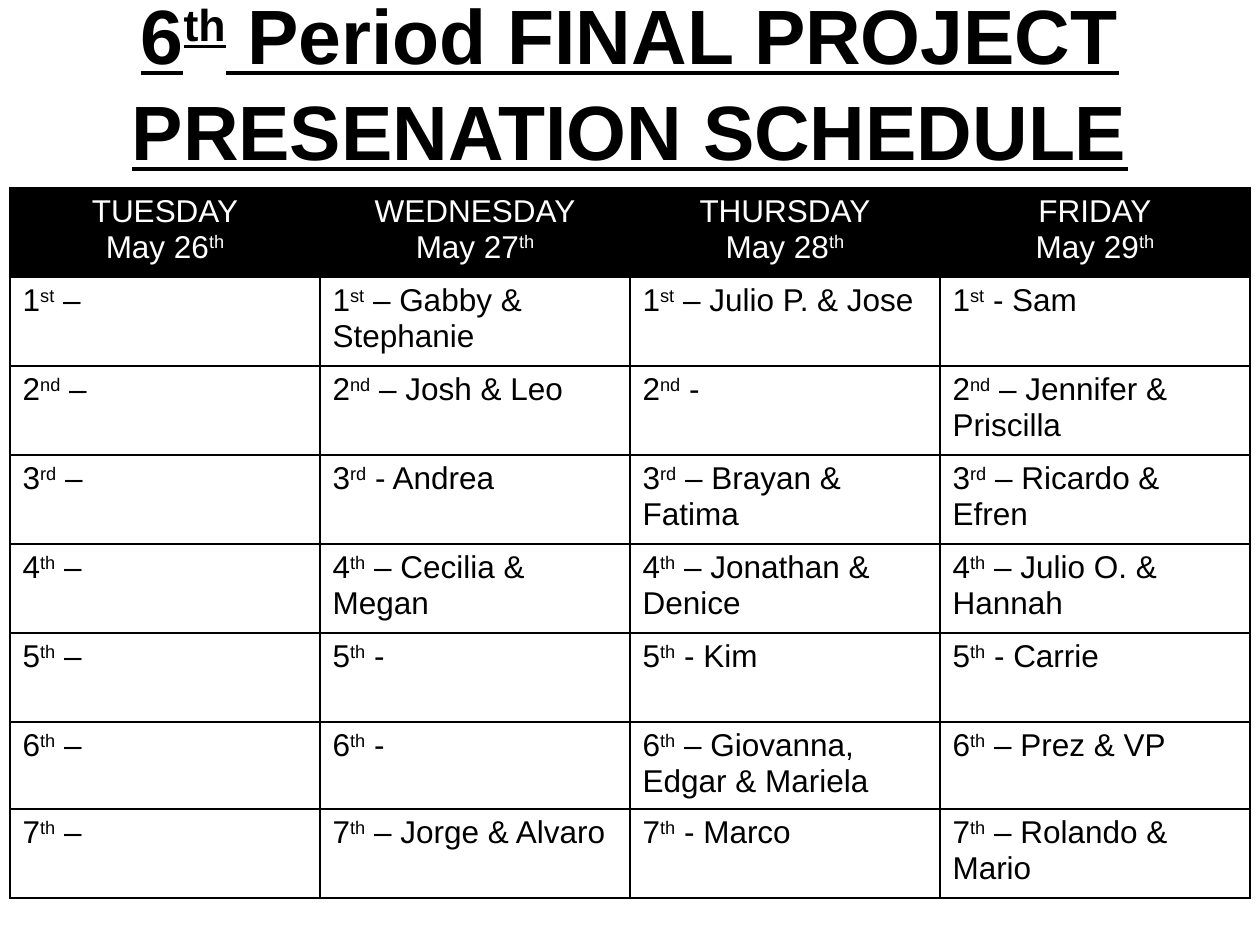
"""Build the 6th period final project presentation schedule slide."""
from lxml.etree import SubElement
from pptx import Presentation
from pptx.dml.color import RGBColor
from pptx.enum.text import MSO_ANCHOR, MSO_AUTO_SIZE, PP_ALIGN
from pptx.oxml.ns import qn
from pptx.util import Pt

SCALE = 914400 / 126
BLACK, WHITE = "000000", "FFFFFF"
DAYS = [("TUESDAY", "26"), ("WEDNESDAY", "27"), ("THURSDAY", "28"), ("FRIDAY", "29")]
SUFFIXES = ["st", "nd", "rd", "th", "th", "th", "th"]
PRESENTERS = [
    ["–", "– Gabby & Stephanie", "– Julio P. & Jose", "- Sam"],
    ["–", "– Josh & Leo", "-", "– Jennifer & Priscilla"],
    ["–", "- Andrea", "– Brayan & Fatima", "– Ricardo & Efren"],
    ["–", "– Cecilia & Megan", "– Jonathan & Denice", "– Julio O. & Hannah"],
    ["–", "-", "- Kim", "- Carrie"],
    ["–", "-", "– Giovanna, Edgar & Mariela", "– Prez & VP"],
    ["–", "– Jorge & Alvaro", "- Marco", "– Rolando & Mario"],
]


def px(length):
    return round(length * SCALE)


def write(paragraph, parts, size, color, align=PP_ALIGN.LEFT):
    """Fill a paragraph, raising every second part as a superscript."""
    paragraph.alignment = align
    paragraph.font.name = "Arial"
    paragraph.font.size = Pt(size)
    paragraph.font.color.rgb = RGBColor.from_string(color)
    for index, text in enumerate(parts):
        run = paragraph.add_run()
        run.text = text
        if index % 2:
            run._r.get_or_add_rPr().set("baseline", "30000")


presentation = Presentation()
presentation.slide_width, presentation.slide_height = px(1260), px(945)
slide = presentation.slides.add_slide(presentation.slide_layouts[5])

title = slide.shapes.title
title.left, title.top, title.width, title.height = px(0), px(38), px(1260), px(88)
frame = title.text_frame
frame.word_wrap = True
frame.auto_size = MSO_AUTO_SIZE.NONE
frame.vertical_anchor = MSO_ANCHOR.MIDDLE
title_lines = [["6", "th", " Period FINAL PROJECT"], ["PRESENATION SCHEDULE"]]
for paragraph, parts in zip([frame.paragraphs[0], frame.add_paragraph()], title_lines):
    write(paragraph, parts, 44, BLACK, PP_ALIGN.CENTER)
    paragraph.font.bold = True
    paragraph.font.underline = True
frame.paragraphs[1].space_before = Pt(2)

table = slide.shapes.add_table(8, 4, px(10), px(188), px(1240), px(710)).table
table.first_row = False
table.horz_banding = False
for column in table.columns:
    column.width = px(310)
for index, row in enumerate(table.rows):
    row.height = px(87 if index == 6 else 89)

for cell in table.iter_cells():
    properties = cell._tc.get_or_add_tcPr()
    for side in ("a:lnL", "a:lnR", "a:lnT", "a:lnB"):
        line = SubElement(properties, qn(side), w=str(Pt(1)))
        fill = SubElement(line, qn("a:solidFill"))
        SubElement(fill, qn("a:srgbClr"), val=BLACK)
    cell.fill.background()

for column, (day, date) in enumerate(DAYS):
    cell = table.cell(0, column)
    cell.fill.solid()
    cell.fill.fore_color.rgb = RGBColor.from_string(BLACK)
    frame = cell.text_frame
    write(frame.paragraphs[0], [day], 18, WHITE, PP_ALIGN.CENTER)
    write(frame.add_paragraph(), [f"May {date}", "th"], 18, WHITE, PP_ALIGN.CENTER)

for row, (suffix, entries) in enumerate(zip(SUFFIXES, PRESENTERS), 1):
    for column, entry in enumerate(entries):
        paragraph = table.cell(row, column).text_frame.paragraphs[0]
        write(paragraph, [str(row), suffix, f" {entry}"], 18, BLACK)

presentation.save("out.pptx")
